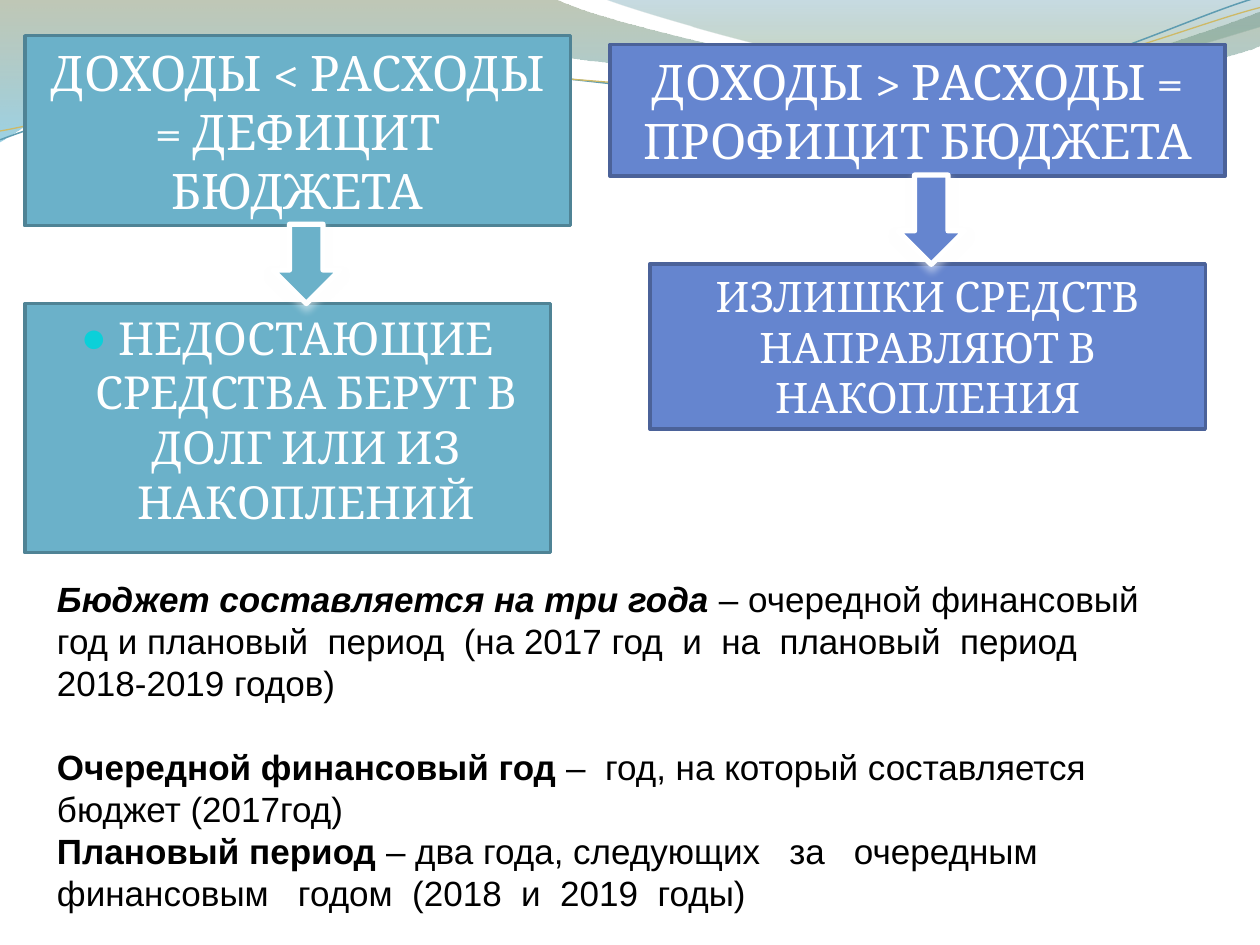
from dataclasses import dataclass
from math import cos, radians, sin
from typing import Optional

from lxml import etree
from pptx import Presentation
from pptx.dml.color import RGBColor
from pptx.enum.shapes import MSO_SHAPE
from pptx.enum.text import MSO_ANCHOR, MSO_AUTO_SIZE, PP_ALIGN
from pptx.oxml.ns import qn
from pptx.util import Cm, Pt

RECTANGLE = MSO_SHAPE.RECTANGLE
DOWN_ARROW = MSO_SHAPE.DOWN_ARROW
CENTER = PP_ALIGN.CENTER
LEFT = PP_ALIGN.LEFT
MIDDLE = MSO_ANCHOR.MIDDLE
TOP = MSO_ANCHOR.TOP
NO_AUTOFIT = MSO_AUTO_SIZE.NONE

COLORS = {
    "teal": "6BB1C9", "teal_edge": "4F8395",
    "blue": "6585CF", "blue_edge": "4B6299",
    "white": "FFFFFF", "black": "000000", "bullet": "0BD0D9",
    "olive": "74855E", "sky": "4AACCE", "sea": "45889F", "moss": "8AA36D",
    "wave_blue": "5E9CB1", "wave_gold": "CEB966",
}
UNIT = 2.54
TILT = -2.7
PIVOT = (4.99, 0.58)


@dataclass
class Area:
    left: float
    top: float
    width: float
    height: float

    def lengths(self) -> list:
        return [Cm(v) for v in (self.left, self.top, self.width, self.height)]


@dataclass
class Panel:
    area: Area
    tone: str
    text: str
    size: int


@dataclass
class Arrow:
    area: Area
    tone: str


@dataclass
class Stop:
    position: float
    color: str
    alpha: int


@dataclass
class Wave:
    start: tuple
    segments: list
    stops: Optional[list] = None
    line: str = ""
    width: float = 0


@dataclass
class Note:
    lead: str
    rest: str
    italic: bool = False
    gap: int = 0


WAVES = [
    Wave((0, -0.01), [
        (4.4, -0.01), (4.76, 0.17, 6.64, 0.63, 7.58, 0.63),
        (8.53, 0.63, 9.58, 0.26, 10, 0.09), (10.01, 0.36),
        (9.83, 0.44, 8.7, 0.76, 7.46, 0.75), (6.22, 0.75, 3.82, 0.28, 2.57, 0.34),
        (1.29, 0.35, 0.46, 0.83, -0.01, 1.13)],
        [Stop(0, "olive", 45), Stop(1, "sky", 55)]),
    Wave((4.79, -0.01), [
        (5.09, 0.11, 6.82, 0.62, 7.69, 0.65), (8.56, 0.69, 9.61, 0.32, 10, 0.21),
        (10, 0)],
        [Stop(0, "sea", 30), Stop(0.8, "moss", 45)]),
    Wave((0, 1.11), [
        (0.48, 0.93, 1.58, 0.57, 2.77, 0.52), (3.95, 0.47, 5.93, 0.89, 7.13, 0.8),
        (8.33, 0.71, 9.38, 0.15, 9.98, -0.02)], line="wave_blue", width=0.85),
    Wave((0, 1.04), [
        (0.47, 0.96, 1.64, 0.61, 2.83, 0.56), (4.03, 0.51, 5.97, 0.83, 7.17, 0.75),
        (8.36, 0.67, 9.41, 0.21, 10, 0.06)], line="wave_gold", width=0.75),
]
SHORTAGE = Panel(Area(0.5, 6.12, 10.6, 5.02), "teal",
                 "НЕДОСТАЮЩИЕ СРЕДСТВА БЕРУТ В ДОЛГ ИЛИ ИЗ НАКОПЛЕНИЙ", 26)
PANELS = [
    Panel(Area(0.5, 0.72, 11, 3.83), "teal", "ДОХОДЫ < РАСХОДЫ = ДЕФИЦИТ БЮДЖЕТА", 28),
    Panel(Area(12.3, 0.9, 12.4, 2.65), "blue", "ДОХОДЫ > РАСХОДЫ = ПРОФИЦИТ БЮДЖЕТА", 28),
    Panel(Area(13.1, 5.32, 11.2, 3.33), "blue", "ИЗЛИШКИ СРЕДСТВ НАПРАВЛЯЮТ В НАКОПЛЕНИЯ", 24),
]
ARROWS = [
    Arrow(Area(18.1, 3.53, 1.35, 1.8), "blue"),
    Arrow(Area(5.5, 4.52, 1.35, 1.6), "teal"),
]
NOTES = [
    Note("Бюджет составляется на три года ",
         "– очередной финансовый год и плановый  период  (на 2017 год  и  на  плановый  период   2018-2019 годов)",
         italic=True),
    Note("Очередной финансовый год ", "–  год, на который составляется бюджет (2017год)", gap=24),
    Note("Плановый период ",
         "– два года, следующих   за   очередным финансовым   годом  (2018  и  2019  годы)"),
]


def rgb(name: str) -> RGBColor:
    return RGBColor.from_string(COLORS[name])


def format_font(font, color: str, **values) -> None:
    for name, value in values.items():
        setattr(font, name, value)
    font.color.rgb = rgb(color)


def paint(shape, fill: str, edge: str, width: float) -> None:
    shape.fill.solid()
    shape.fill.fore_color.rgb = rgb(fill)
    shape.line.color.rgb = rgb(edge)
    shape.line.width = Pt(width)


def place(x: float, y: float, tilt: float) -> tuple:
    turn = radians(-tilt)
    across, down = x - PIVOT[0], y - PIVOT[1]
    return (Cm((PIVOT[0] + across * cos(turn) - down * sin(turn)) * UNIT),
            Cm((PIVOT[1] + across * sin(turn) + down * cos(turn)) * UNIT))


def draw_wave(page, wave: Wave) -> None:
    tilt = 0 if wave.stops else TILT
    builder = page.shapes.build_freeform(*place(*wave.start, tilt))
    builder.add_line_segments([place(*segment[-2:], tilt) for segment in wave.segments],
                              close=bool(wave.stops))
    shape = builder.convert_to_shape()
    for segment, edge in zip(wave.segments, list(shape.element.iter(qn("a:lnTo")))):
        if len(segment) == 2:
            continue
        curve = etree.Element(qn("a:cubicBezTo"))
        for index in (0, 2, 4):
            x, y = place(*segment[index:index + 2], tilt)
            etree.SubElement(curve, qn("a:pt"), x=str(x - shape.left), y=str(y - shape.top))
        edge.getparent().replace(edge, curve)
    shape.rotation = tilt
    shape.shadow.inherit = False
    if not wave.stops:
        shape.fill.background()
        shape.line.color.rgb = rgb(wave.line)
        shape.line.width = Pt(wave.width)
        return
    shape.line.fill.background()
    shape.fill.gradient()
    shape.fill.gradient_angle = 270
    for stop, target in zip(wave.stops, shape.fill.gradient_stops):
        target.position = stop.position
        target.color.rgb = rgb(stop.color)
    for stop, color in zip(wave.stops, shape.element.spPr.iter(qn("a:srgbClr"))):
        etree.SubElement(color, qn("a:alpha"), val=str(stop.alpha * 1000))


def fill_panel(shape, panel: Panel, anchor, bullet: bool = False) -> None:
    paint(shape, panel.tone, panel.tone + "_edge", 2)
    box = shape.text_frame
    box.word_wrap = True
    box.auto_size = NO_AUTOFIT
    box.vertical_anchor = anchor
    para = box.paragraphs[0]
    para.alignment = CENTER
    para.space_before = Pt(0)
    if bullet:
        layout = para._p.get_or_add_pPr()
        layout.set("marL", str(Cm(0.76)))
        layout.set("indent", str(Cm(-0.76)))
        tint = etree.SubElement(layout, qn("a:buClr"))
        etree.SubElement(tint, qn("a:srgbClr"), val=COLORS["bullet"])
        etree.SubElement(layout, qn("a:buSzPct"), val="95000")
        etree.SubElement(layout, qn("a:buChar"), char="●")
    span = para.add_run()
    span.text = panel.text
    format_font(span.font, "white", name="Cambria", size=Pt(panel.size))


def draw_panel(page, panel: Panel) -> None:
    shape = page.shapes.add_shape(RECTANGLE, *panel.area.lengths())
    shape.shadow.inherit = False
    fill_panel(shape, panel, MIDDLE)


def draw_arrow(page, arrow: Arrow) -> None:
    shape = page.shapes.add_shape(DOWN_ARROW, *arrow.area.lengths())
    paint(shape, arrow.tone, "white", 3)
    shape.shadow.inherit = False
    effects = shape.element.spPr.find(qn("a:effectLst"))
    shadow = etree.SubElement(effects, qn("a:outerShdw"), blurRad=str(Pt(4.5)),
                              dist=str(Pt(3)), dir="5400000", rotWithShape="0")
    color = etree.SubElement(shadow, qn("a:srgbClr"), val=COLORS["white"])
    etree.SubElement(color, qn("a:alpha"), val="48000")


def draw_notes(page, area: Area, notes: list) -> None:
    box = page.shapes.add_textbox(*area.lengths()).text_frame
    box.word_wrap = True
    for index, note in enumerate(notes):
        para = box.add_paragraph() if index else box.paragraphs[0]
        para.alignment = LEFT
        para.space_before = Pt(note.gap)
        for text, bold, italic in ((note.lead, True, note.italic), (note.rest, False, False)):
            span = para.add_run()
            span.text = text
            format_font(span.font, "black", name="Arial", size=Pt(20), bold=bold, italic=italic)


def main() -> None:
    deck = Presentation()
    deck.slide_width, deck.slide_height = Cm(25.4), Cm(19.05)
    page = deck.slides.add_slide(deck.slide_layouts[1])
    title = page.shapes.title.element
    title.getparent().remove(title)
    for wave in WAVES:
        draw_wave(page, wave)
    body = page.placeholders[1]
    body.left, body.top, body.width, body.height = SHORTAGE.area.lengths()
    fill_panel(body, SHORTAGE, TOP, bullet=True)
    for panel in PANELS:
        draw_panel(page, panel)
    for arrow in ARROWS:
        draw_arrow(page, arrow)
    draw_notes(page, Area(0.9, 11.51, 22.6, 7.09), NOTES)
    deck.save("out.pptx")


if __name__ == "__main__":
    main()
